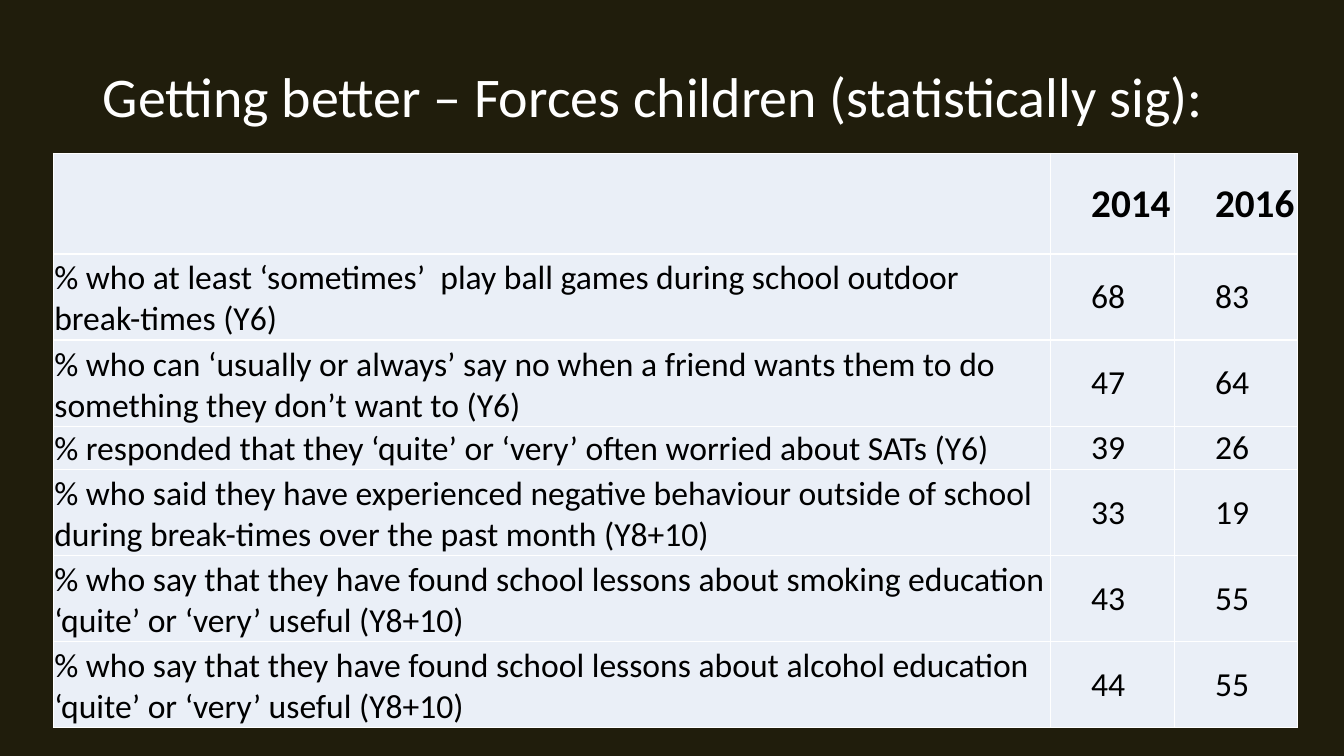
from lxml.etree import SubElement as Sub
from pptx import Presentation
from pptx.dml.color import RGBColor
from pptx.enum.text import MSO_ANCHOR as Anchor
from pptx.oxml.ns import qn
from pptx.util import Cm, Pt

ROWS = [
    ("% who at least ‘sometimes’  play ball games during school outdoor break-times (Y6)", 68, 83),
    ("% who can ‘usually or always’ say no when a friend wants them to do something they don’t want to (Y6)", 47, 64),
    ("% responded that they ‘quite’ or ‘very’ often worried about SATs (Y6)", 39, 26),
    ("% who said they have experienced negative behaviour outside of school during break-times over the past month (Y8+10)", 33, 19),
    ("% who say that they have found school lessons about smoking education ‘quite’ or ‘very’ useful (Y8+10)", 43, 55),
    ("% who say that they have found school lessons about alcohol education ‘quite’ or ‘very’ useful (Y8+10)", 44, 55),
]
WIDTHS = [25.13, 3.12, 3.1]
HEAD, TALL, SHORT = 2.53, 2.17, 1.09
HEIGHTS = [HEAD, TALL, TALL, SHORT, TALL, TALL, TALL]


def paint(fill, color):
    """Fill with a solid hex colour."""
    fill.solid()
    fill.fore_color.rgb = RGBColor.from_string(color)


def write(frame, text, size, color, bold=False):
    """Add one run to the first paragraph and return the paragraph."""
    para = frame.paragraphs[0]
    run = para.add_run()
    run.text = text
    run.font.name = "Calibri"
    run.font.size = Pt(size)
    run.font.bold = bold
    paint(run.font.fill, color)
    return para


def heading(slide, box, text):
    """Place the wrapped title, centred upright in its box."""
    frame = slide.shapes.add_textbox(*map(Cm, box)).text_frame
    frame.word_wrap = True
    frame.vertical_anchor = Anchor.MIDDLE
    write(frame, text, 40, "FFFFFF").line_spacing = 0.9


def border(cell, color):
    """Draw a one-point line on all four sides of a cell."""
    props = cell._tc.get_or_add_tcPr()
    for side in ("a:lnL", "a:lnR", "a:lnT", "a:lnB"):
        line = Sub(props, qn(side), w=str(Pt(1)))
        Sub(Sub(line, qn("a:solidFill")), qn("a:srgbClr"), val=color)


def results(slide, left, top):
    """Build the table of yearly percentages."""
    box = map(Cm, (left, top, sum(WIDTHS), sum(HEIGHTS)))
    table = slide.shapes.add_table(len(HEIGHTS), len(WIDTHS), *box).table
    for col, width in zip(table.columns, WIDTHS):
        col.width = Cm(width)
    for row, height in zip(table.rows, HEIGHTS):
        row.height = Cm(height)
    for i, row in enumerate([("", 2014, 2016)] + ROWS):
        for j, value in enumerate(row):
            cell = table.cell(i, j)
            border(cell, "FFFFFF")
            paint(cell.fill, "EAEFF7")
            cell.margin_left = Cm(1.02 if j else 0.02)
            cell.margin_right = cell.margin_top = Cm(0.02)
            cell.margin_bottom = 0
            cell.vertical_anchor = Anchor.MIDDLE if j else Anchor.BOTTOM
            if value:
                write(cell.text_frame, str(value), 24 if i else 28, "000000", i == 0)


def main():
    """Build and save the slide."""
    deck = Presentation()
    deck.slide_width, deck.slide_height = Cm(33.87), Cm(19.05)
    slide = deck.slides.add_slide(deck.slide_layouts[6])
    paint(slide.background.fill, "201D0C")
    heading(slide, (2.34, 0.66, 29.21, 3.68),
            "Getting better – Forces children (statistically sig):")
    results(slide, 1.35, 3.87)
    deck.save("out.pptx")


if __name__ == "__main__":
    main()
